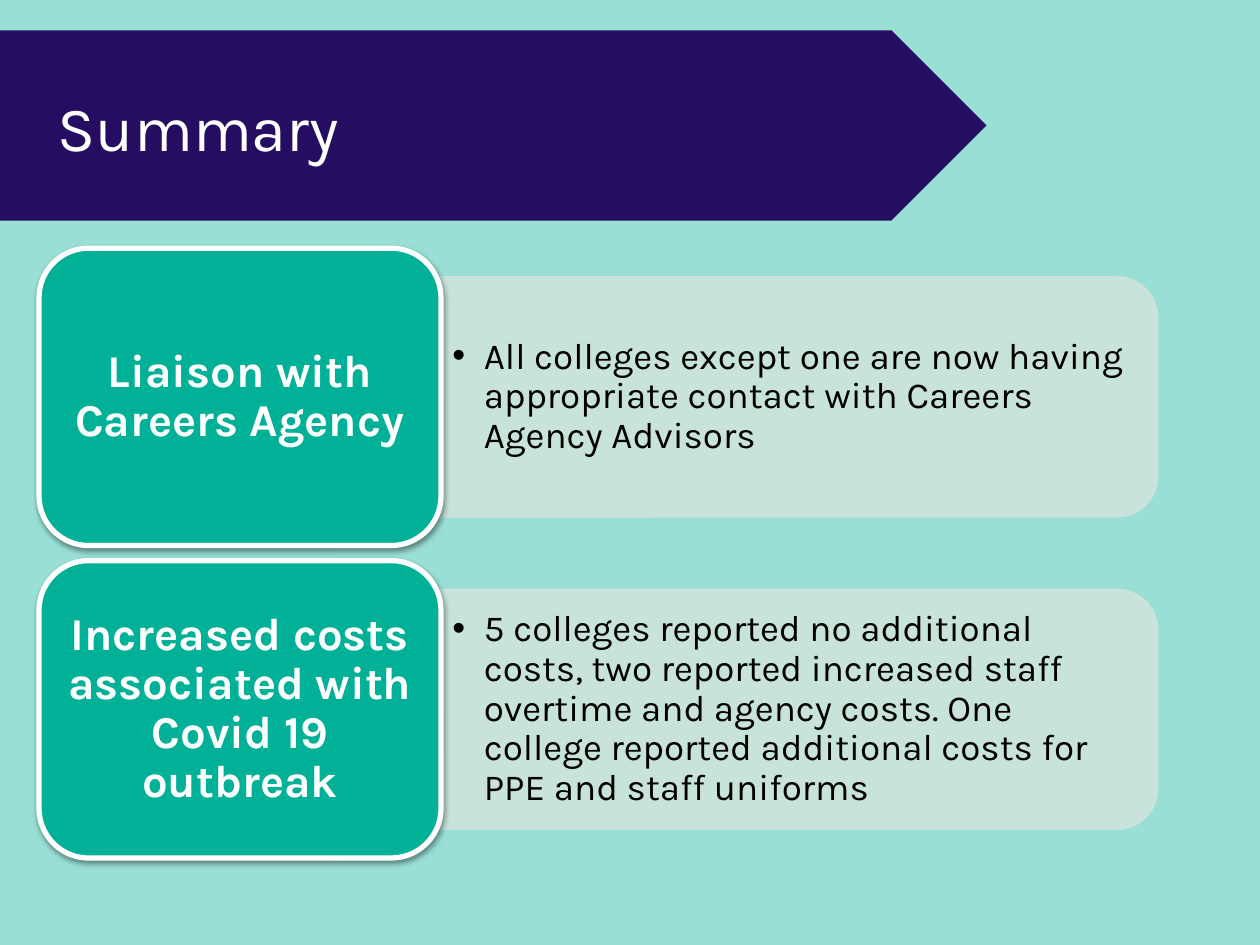
from lxml.etree import SubElement
from pptx import Presentation
from pptx.dml.color import RGBColor
from pptx.enum.shapes import MSO_SHAPE
from pptx.enum.text import MSO_ANCHOR, PP_ALIGN
from pptx.oxml import parse_xml
from pptx.oxml.ns import nsdecls, qn
from pptx.util import Inches, Pt

ROWS = [
    ("Liaison with Careers Agency",
     "All colleges except one are now having appropriate contact with Careers Agency Advisors"),
    ("Increased costs associated with Covid 19 outbreak",
     "5 colleges reported no additional costs, two reported increased staff overtime and agency costs. "
     "One college reported additional costs for PPE and staff uniforms"),
]
FONT = "Karla"
MINT, NAVY, GREEN, PALE = "99DFD5", "250E62", "00B097", "CCE4DD"
WHITE, BLACK = "FFFFFF", "000000"
ROW_TOP, ROW_PITCH = 1.97, 2.48
CARD_LEFT, CARD_WIDTH, CARD_HEIGHT = 0.31, 3.19, 2.36
PANEL_WIDTH, PANEL_HEIGHT = 5.68, 1.89
CARD_INSET = 0.115
SHADOW = f"""<a:effectLst {nsdecls('a')}>
  <a:outerShdw blurRad="{Pt(3.1)}" dist="{Pt(1.6)}" dir="5400000" rotWithShape="0">
    <a:srgbClr val="{BLACK}"><a:alpha val="38000"/></a:srgbClr>
  </a:outerShdw>
</a:effectLst>"""


def color(value):
    return RGBColor.from_string(value)


def add_shape(slide, kind, box, fill, line=None, line_width=0):
    shape = slide.shapes.add_shape(kind, *map(Inches, box))
    shape.shadow.inherit = False
    shape.fill.solid()
    shape.fill.fore_color.rgb = color(fill)
    if line:
        shape.line.color.rgb = color(line)
        shape.line.width = Pt(line_width)
    else:
        shape.line.fill.background()
    return shape


def write(shape, text, size, ink, align=PP_ALIGN.LEFT, bold=False):
    frame = shape.text_frame
    frame.text = text
    frame.word_wrap = True
    frame.vertical_anchor = MSO_ANCHOR.MIDDLE
    paragraph = frame.paragraphs[0]
    paragraph.alignment = align
    font = paragraph.runs[0].font
    font.name, font.size, font.bold = FONT, Pt(size), bold
    font.color.rgb = color(ink)
    return paragraph


def add_text(slide, box, insets, *style):
    shape = slide.shapes.add_textbox(*map(Inches, box))
    paragraph = write(shape, *style)
    paragraph.line_spacing = 0.9
    frame = shape.text_frame
    frame.margin_left = frame.margin_right = Inches(insets[0])
    frame.margin_top = frame.margin_bottom = Inches(insets[1])
    return paragraph


def add_panel(slide, left, middle, text):
    box = (left + (PANEL_WIDTH - PANEL_HEIGHT) / 2, middle - PANEL_WIDTH / 2, PANEL_HEIGHT, PANEL_WIDTH)
    panel = add_shape(slide, MSO_SHAPE.ROUND_2_SAME_RECTANGLE, box, PALE, PALE, 2)
    panel.rotation = 90
    for swatch in panel._element.spPr.iter(qn("a:srgbClr")):
        SubElement(swatch, qn("a:alpha"), val="90000")
    paragraph = add_text(slide, (left, middle - 0.85, 5.59, 1.7), (0.09, 0.04), text, 21, BLACK)
    properties = paragraph._p.get_or_add_pPr()
    properties.set("marL", str(Inches(0.25)))
    properties.set("indent", str(-Inches(0.25)))
    SubElement(properties, qn("a:buFont"), typeface="Arial")
    SubElement(properties, qn("a:buChar"), char="•")


def add_card(slide, top, text):
    box = (CARD_LEFT, top, CARD_WIDTH, CARD_HEIGHT)
    card = add_shape(slide, MSO_SHAPE.ROUNDED_RECTANGLE, box, GREEN, WHITE, 3)
    properties = card._element.spPr
    properties.replace(properties.find(qn("a:effectLst")), parse_xml(SHADOW))
    inner = (CARD_LEFT + CARD_INSET, top + CARD_INSET,
             CARD_WIDTH - 2 * CARD_INSET, CARD_HEIGHT - 2 * CARD_INSET)
    add_text(slide, inner, (0.11, 0.05), text, 26, WHITE, PP_ALIGN.CENTER, True)


def main():
    """Build the summary slide with one card and panel per topic."""
    presentation = Presentation()
    presentation.slide_width, presentation.slide_height = Inches(10), Inches(7.5)
    slide = presentation.slides.add_slide(presentation.slide_layouts[5])
    slide.background.fill.solid()
    slide.background.fill.fore_color.rgb = color(MINT)

    banner = add_shape(slide, MSO_SHAPE.PENTAGON, (0, 0.24, 7.83, 1.51), NAVY)
    title = slide.shapes.title
    title._element.addprevious(banner._element)
    title.left, title.top, title.width, title.height = map(Inches, (0.36, 0.4, 7.46, 1.2))
    write(title, "Summary", 36, WHITE)

    for index, (heading, detail) in enumerate(ROWS):
        top = ROW_TOP + index * ROW_PITCH
        add_panel(slide, CARD_LEFT + CARD_WIDTH, top + CARD_HEIGHT / 2, detail)
        add_card(slide, top, heading)

    presentation.save("out.pptx")


if __name__ == "__main__":
    main()
